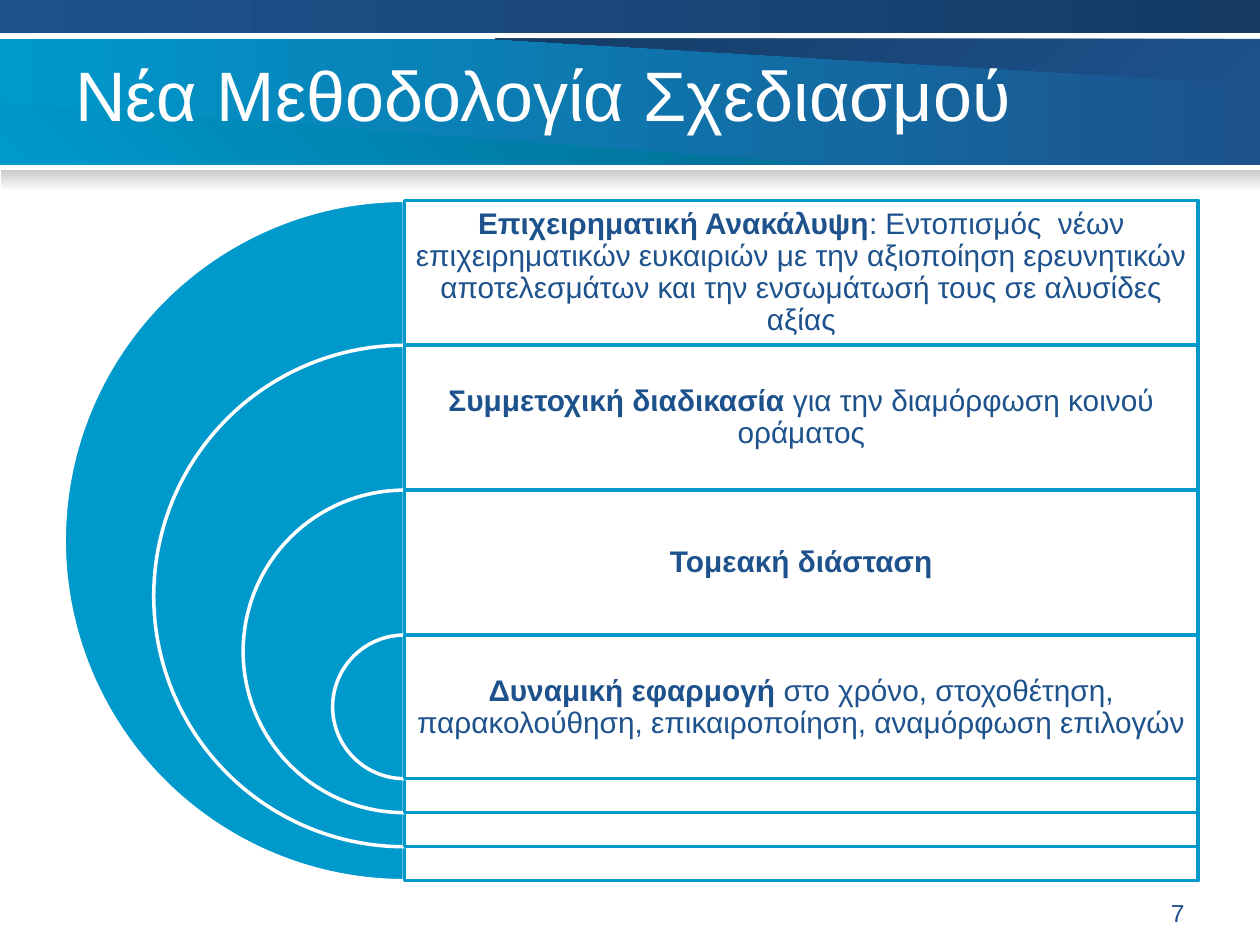
import pptx
import pptx.util
import pptx.dml.color
import pptx.enum.shapes
import pptx.enum.text
import pptx.oxml
import pptx.oxml.ns

Inches = pptx.util.Inches
RGB = pptx.dml.color.RGBColor
KIND = pptx.enum.shapes.MSO_SHAPE
ALIGN = pptx.enum.text.PP_ALIGN
ANCHOR = pptx.enum.text.MSO_ANCHOR

WHITE = RGB(0xFF, 0xFF, 0xFF)
CYAN = RGB(0x00, 0x99, 0xCC)
TEAL = RGB(0x00, 0x6D, 0x92)
BLUE = RGB(0x1D, 0x52, 0x8D)
NAVY = RGB(0x15, 0x3B, 0x65)
GRAY = RGB(0xCA, 0xCA, 0xCA)

LEFT, TOP, WIDTH, ROW = 3.21, 1.59, 6.3, 1.15
OUTER, SHRINK = 5.4, 1.42

STEPS = [
    ("Επιχειρηματική Ανακάλυψη",
     ": Εντοπισμός  νέων επιχειρηματικών ευκαιριών με την αξιοποίηση "
     "ερευνητικών αποτελεσμάτων και την ενσωμάτωσή τους σε αλυσίδες αξίας"),
    ("Συμμετοχική διαδικασία ", "για την διαμόρφωση κοινού οράματος"),
    ("Τομεακή διάσταση", ""),
    ("Δυναμική εφαρμογή ",
     "στο χρόνο, στοχοθέτηση, παρακολούθηση, επικαιροποίηση, "
     "αναμόρφωση επιλογών"),
]


def blend(shape, start, end, angle):
    """Fill with a two-colour gradient; angle runs counter-clockwise."""
    shape.shadow.inherit = False
    shape.line.fill.background()
    shape.fill.gradient()
    shape.fill.gradient_angle = angle
    for stop, color in zip(shape.fill.gradient_stops, (start, end)):
        stop.color.rgb = color


def add_shape(slide, kind, box):
    return slide.shapes.add_shape(kind, *map(Inches, box))


def add_bar(slide, box, start, end, angle=0):
    blend(add_shape(slide, KIND.RECTANGLE, box), start, end, angle)


def add_wedge(slide, points, start, end, angle):
    first, *rest = [(Inches(x), Inches(y)) for x, y in points]
    pen = slide.shapes.build_freeform(*first)
    pen.add_line_segments(rest)
    blend(pen.convert_to_shape(), start, end, angle)


def add_solid(slide, kind, box, fill, line):
    shape = add_shape(slide, kind, box)
    shape.shadow.inherit = False
    shape.fill.solid()
    shape.fill.fore_color.rgb = fill
    shape.line.color.rgb = line
    shape.line.width = pptx.util.Pt(2)
    return shape


def fade(shape, percent):
    """Set the opacity of a solid fill."""
    color = shape.fill._xPr.find(".//" + pptx.oxml.ns.qn("a:srgbClr"))
    alpha = pptx.oxml.parse_xml(
        f'<a:alpha {pptx.oxml.ns.nsdecls("a")} val="{percent * 1000}"/>')
    color.append(alpha)


def add_text(slide, box, runs, size, color, align=ALIGN.LEFT):
    frame = slide.shapes.add_textbox(*map(Inches, box)).text_frame
    frame.word_wrap = True
    para = frame.paragraphs[0]
    para.alignment = align
    para.font.name = "Arial"
    para.font.size = pptx.util.Pt(size)
    para.font.color.rgb = color
    for text, bold in runs:
        run = para.add_run()
        run.text = text
        run.font.bold = bold
    return frame


def add_header(slide):
    add_bar(slide, (0, 0.31, 10, 1), CYAN, BLUE)
    add_wedge(slide, [(3.93, 0.31), (10, 0.67), (10, 0.31)], BLUE, NAVY, 135)
    add_wedge(slide, [(0, 1.3), (6.43, 1.3), (0, 0.81)], CYAN, TEAL, 45)
    add_bar(slide, (0, 0, 10, 0.26), BLUE, NAVY)
    add_bar(slide, (0.01, 1.35, 9.99, 0.17), GRAY, WHITE, 270)
    title = add_text(slide, (0.5, 0.3, 9, 1.25),
                     [("Νέα Μεθοδολογία Σχεδιασμού", False)], 40, WHITE)
    title.margin_top = Inches(0.11)


def add_step(slide, index, head, tail):
    """Draw one nested half disc with its panel and text."""
    size = OUTER - SHRINK * index
    top = TOP + ROW * index
    pie = add_solid(slide, KIND.PIE, (LEFT - size / 2, top, size, size),
                    CYAN, WHITE)
    pie.adjustments[0], pie.adjustments[1] = 54, 162
    panel = add_solid(slide, KIND.RECTANGLE, (LEFT, top, WIDTH, size),
                      WHITE, CYAN)
    fade(panel, 90)
    runs = [(head, True)] + ([(tail, False)] if tail else [])
    frame = add_text(slide, (LEFT, top, WIDTH, ROW), runs, 17, BLUE,
                     ALIGN.CENTER)
    frame.vertical_anchor = ANCHOR.MIDDLE
    frame.margin_left = frame.margin_right = Inches(0.07)
    frame.margin_top = frame.margin_bottom = Inches(0.07)
    frame.paragraphs[0].line_spacing = 0.9


def main():
    deck = pptx.Presentation()
    deck.slide_width, deck.slide_height = Inches(10), Inches(7.5)
    slide = deck.slides.add_slide(deck.slide_layouts[6])
    add_header(slide)
    for index, (head, tail) in enumerate(STEPS):
        add_step(slide, index, head, tail)
    add_text(slide, (7.17, 7.08, 2.33, 0.27), [("7", False)], 14, BLUE,
             ALIGN.RIGHT)
    deck.save("out.pptx")


if __name__ == "__main__":
    main()
